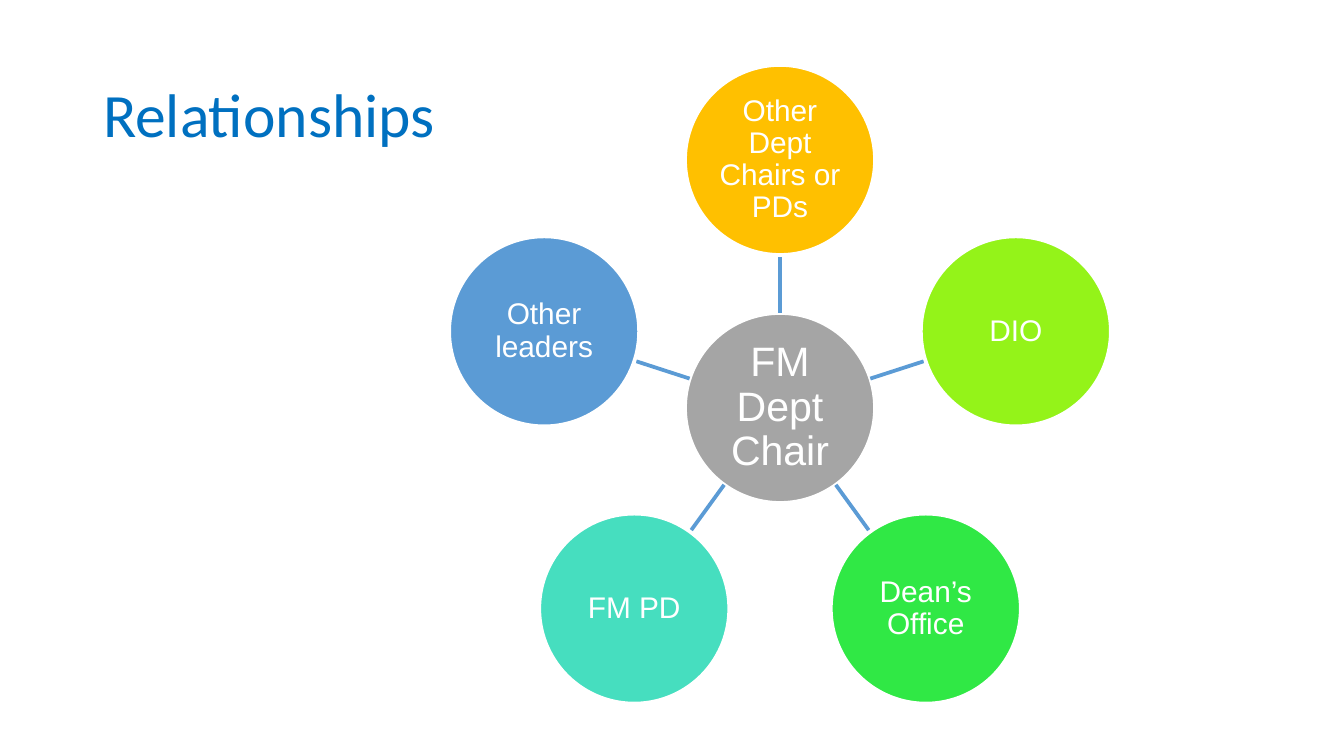
from math import cos, radians, sin

from lxml.etree import SubElement
from pptx import Presentation
from pptx.dml.color import RGBColor
from pptx.enum.shapes import MSO_CONNECTOR as Connector, MSO_SHAPE as Shape
from pptx.enum.text import MSO_ANCHOR as Anchor, MSO_AUTO_SIZE as AutoSize, PP_ALIGN as Align
from pptx.oxml.ns import qn
from pptx.util import Emu, Pt

EMU_PER_PX = 914400 / 134.4
PAGE_WIDTH, PAGE_HEIGHT = 1344, 756
CENTER_X, CENTER_Y = 780, 408
RADIUS = 95   # of every circle
ORBIT = 248   # from the hub's center to the center of an outer circle

COLORS = {
    "title": "0070C0",
    "white": "FFFFFF",
    "spoke": "5B9BD5",
    "hub": "A5A5A5",
    "chairs": "FFC000",
    "dio": "94F319",
    "dean": "30E845",
    "director": "46DEBF",
    "leaders": "5B9BD5",
}

# Outer circles, clockwise from the top
PARTNERS = [
    ("Other Dept Chairs or PDs", "chairs"),
    ("DIO", "dio"),
    ("Dean’s Office", "dean"),
    ("FM PD", "director"),
    ("Other leaders", "leaders"),
]


def px(length):
    return Emu(round(length * EMU_PER_PX))


def color(name):
    return RGBColor.from_string(COLORS[name])


def write_text(box, text, *, font="Arial", size=16, fill="white",
               align=Align.CENTER, anchor=Anchor.MIDDLE, margins=(1, 1)):
    frame = box.text_frame
    frame.word_wrap = True
    frame.auto_size = AutoSize.NONE
    frame.vertical_anchor = anchor
    frame.margin_left = frame.margin_right = px(margins[0])
    frame.margin_top = frame.margin_bottom = px(margins[1])
    para = frame.paragraphs[0]
    para.alignment = align
    para.line_spacing = 0.9
    span = para.add_run()
    span.text = text
    span.font.name = font
    span.font.size = Pt(size)
    span.font.color.rgb = color(fill)


def add_title(page, text):
    title = page.shapes.title
    title.left, title.top = px(93), px(51)
    title.width, title.height = px(434), px(105)
    write_text(title, text, font="Calibri", size=33, fill="title",
               align=Align.LEFT, anchor=Anchor.BOTTOM, margins=(10, 5))


def add_circle(page, x, y, text, fill, **text_format):
    circle = page.shapes.add_shape(Shape.OVAL, px(x - RADIUS), px(y - RADIUS),
                                   px(2 * RADIUS), px(2 * RADIUS))
    circle.shadow.inherit = False
    circle.fill.solid()
    circle.fill.fore_color.rgb = color(fill)
    circle.line.color.rgb = color("white")
    circle.line.width = Pt(2)
    write_text(circle, text, **text_format)


def add_spoke(page, start, end):
    spoke = page.shapes.add_connector(Connector.STRAIGHT,
                                      *map(px, start), *map(px, end))
    spoke.line.color.rgb = color("spoke")
    spoke.line.width = Pt(2)
    SubElement(spoke._element.spPr, qn("a:effectLst"))


def orbit_point(angle, distance):
    return (CENTER_X + distance * cos(radians(angle)),
            CENTER_Y + distance * sin(radians(angle)))


def main():
    deck = Presentation()
    deck.slide_width, deck.slide_height = px(PAGE_WIDTH), px(PAGE_HEIGHT)
    page = deck.slides.add_slide(deck.slide_layouts[5])

    add_title(page, "Relationships")

    # Hub
    add_circle(page, CENTER_X, CENTER_Y, "FM Dept Chair", "hub",
               size=22, margins=(2, 2))

    # Partners around the hub, each with a spoke from rim to rim
    for index, (label, fill) in enumerate(PARTNERS):
        angle = index * 360 / len(PARTNERS) - 90
        add_spoke(page, orbit_point(angle, RADIUS),
                  orbit_point(angle, ORBIT - RADIUS))
        add_circle(page, *orbit_point(angle, ORBIT), label, fill)

    deck.save("out.pptx")


if __name__ == "__main__":
    main()
